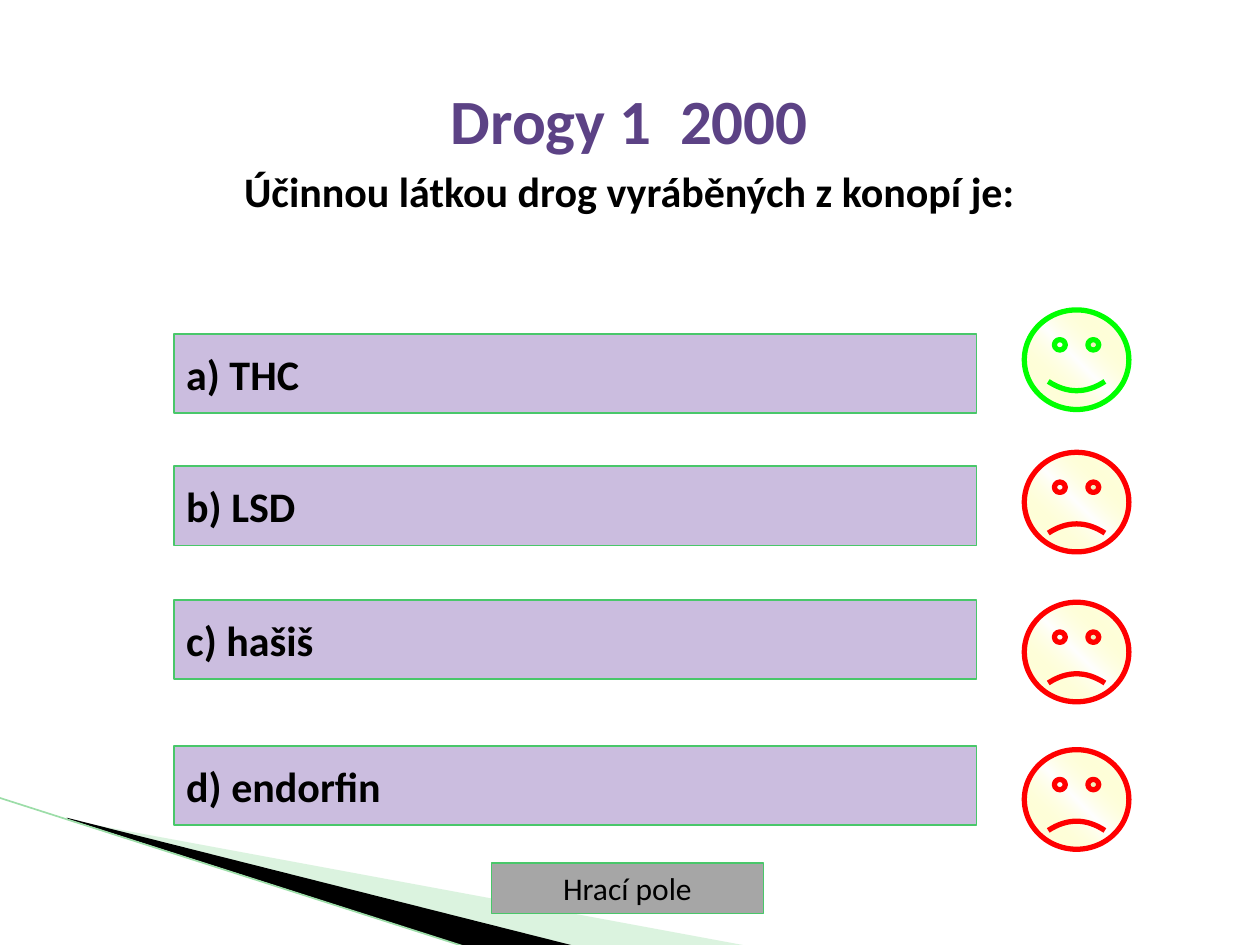
from lxml import etree
from pptx import Presentation
from pptx.dml.color import RGBColor
from pptx.enum import shapes, text
from pptx.oxml import parse_xml
from pptx.oxml.ns import nsdecls, qn
from pptx.util import Inches, Pt

BLACK = RGBColor(0x00, 0x00, 0x00)
MINT = RGBColor(0xA5, 0xE1, 0xAF)
PALE = RGBColor(0x9C, 0xDD, 0xA8)
EDGE = RGBColor(0x49, 0xC7, 0x6A)
GREY = RGBColor(0xA6, 0xA6, 0xA6)
LILAC = RGBColor(0xCB, 0xBD, 0xDF)
PURPLE = RGBColor(0x5C, 0x42, 0x85)
GREEN = RGBColor(0x00, 0xFF, 0x00)
RED = RGBColor(0xFF, 0x00, 0x00)
FONT = "Calibri"

# Content: heading lines (text, size, colour, space before)
HEAD = [
    ("Drogy 1  2000", 36, PURPLE, 0),
    ("Účinnou látkou drog vyráběných z konopí je:", 24, BLACK, 4.8),
]
# Answers: text, bar top, face top, right or wrong
ANSWERS = [
    ("a) THC", 2.65, 2.46, True),
    ("b) LSD", 3.7, 3.59, False),
    ("c) hašiš", 4.76, 4.78, False),
    ("d) endorfin", 5.92, 5.95, False),
]
BACK = "Hrací pole"
# Corner wedges: points, colour, opacity in percent
WEDGES = [
    ([(0.55, 6.51), (5.95, 7.51), (4.56, 7.51), (0.55, 6.5)], MINT, 40),
    ([(0.53, 6.49), (4.57, 7.51), (3.72, 7.52), (0.54, 6.5)], BLACK, 100),
]
GLOW = f"""<a:gradFill {nsdecls("a")} rotWithShape="1"><a:gsLst>
<a:gs pos="0"><a:srgbClr val="FFFFFF"/></a:gs>
<a:gs pos="50000"><a:srgbClr val="FFFF66"><a:alpha val="0"/></a:srgbClr></a:gs>
<a:gs pos="100000"><a:srgbClr val="FFFFFF"/></a:gs>
</a:gsLst><a:lin ang="18900000" scaled="1"/></a:gradFill>"""


def style(par, size, color, bold, align):
    par.alignment = align
    font = par.font
    font.name, font.size, font.bold = FONT, Pt(size), bold
    font.color.rgb = color


def button(slide, box, label, fill, width, size, bold, align):
    shape = slide.shapes.add_shape(
        shapes.MSO_SHAPE.ACTION_BUTTON_CUSTOM, *map(Inches, box))
    shape.shadow.inherit = False
    shape.fill.solid()
    shape.fill.fore_color.rgb = fill
    shape.line.color.rgb = EDGE
    shape.line.width = Pt(width)
    frame = shape.text_frame
    frame.word_wrap = False
    frame.vertical_anchor = text.MSO_ANCHOR.MIDDLE
    frame.text = label
    style(frame.paragraphs[0], size, BLACK, bold, align)


def face(slide, top, good):
    shape = slide.shapes.add_shape(
        shapes.MSO_SHAPE.SMILEY_FACE, *map(Inches, (8.13, top, 0.83, 0.79)))
    shape.adjustments[0] = 0.047 if good else -0.047
    shape.shadow.inherit = False
    shape.line.color.rgb = GREEN if good else RED
    shape.line.width = Pt(3)
    shape._element.spPr.find(qn("a:prstGeom")).addnext(parse_xml(GLOW))


def wedge(slide, points, color, alpha):
    points = [(Inches(x), Inches(y)) for x, y in points]
    form = slide.shapes.build_freeform(*points[0])
    form.add_line_segments(points[1:], close=True)
    shape = form.convert_to_shape()
    shape.shadow.inherit = False
    shape.fill.solid()
    shape.fill.fore_color.rgb = color
    shape.line.fill.background()
    if alpha < 100:
        tint = shape._element.spPr.find(qn("a:solidFill"))[0]
        etree.SubElement(tint, qn("a:alpha")).set("val", str(alpha * 1000))


def main():
    deck = Presentation()
    deck.slide_width, deck.slide_height = Inches(10), Inches(7.5)
    slide = deck.slides.add_slide(deck.slide_layouts[5])

    # Corner decoration
    for points, color, alpha in WEDGES:
        wedge(slide, points, color, alpha)
    rim = slide.shapes.add_connector(
        shapes.MSO_CONNECTOR.STRAIGHT, *map(Inches, (-0.01, 6.33, 3.71, 7.52)))
    rim.line.color.rgb = PALE
    rim.line.width = Pt(0.95)
    etree.SubElement(rim._element.spPr, qn("a:effectLst"))

    # Heading and question
    title = slide.shapes.title
    title.left, title.top, title.width, title.height = map(
        Inches, (0.39, 0.6, 9.21, 0.75))
    frame = title.text_frame
    frame.word_wrap = True
    frame.auto_size = text.MSO_AUTO_SIZE.NONE
    frame.vertical_anchor = text.MSO_ANCHOR.TOP
    frame.text = "\n".join(line[0] for line in HEAD)
    for par, (_, size, color, gap) in zip(frame.paragraphs, HEAD):
        par.space_before = Pt(gap)
        style(par, size, color, True, text.PP_ALIGN.CENTER)

    # Answer bars with their faces
    for label, top, spot, good in ANSWERS:
        button(slide, (1.38, top, 6.37, 0.63), label, LILAC, 1, 24, True,
               text.PP_ALIGN.LEFT)
        face(slide, spot, good)

    # Button back to the board
    button(slide, (3.9, 6.85, 2.16, 0.4), BACK, GREY, 0.75, 18, False,
           text.PP_ALIGN.CENTER)
    deck.save("out.pptx")


if __name__ == "__main__":
    main()
